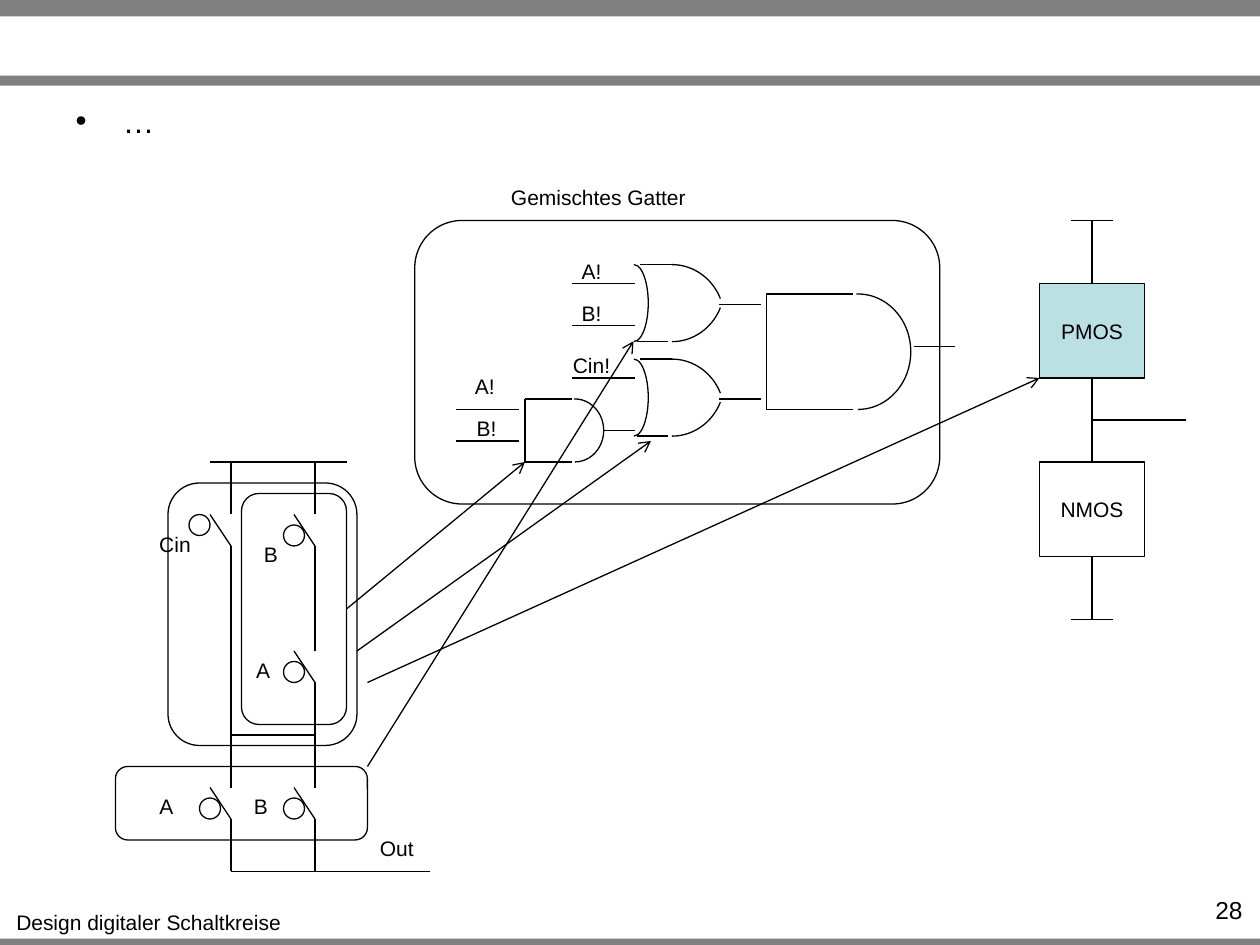
from pptx import Presentation
from pptx.dml.color import RGBColor
from pptx.enum import shapes, text
from pptx.oxml.ns import qn
from pptx.util import Pt
from lxml import etree

FONT, BLACK, GREY, TEAL = "Arial", "000000", "808080", "BBE0E3"
W, H = 720, 540
SHAPE = shapes.MSO_SHAPE

BARS = [(0, 536.4, W, 3.6), (0, 0, W, 9.4), (0, 43.2, W, 5.8)]

# Labels: text, centre x, top, width
LABELS = [
    ("Design digitaler Schaltkreise", 85, 516, 168), ("Gemischtes Gatter", 342, 102, 116),
    ("A!", 338, 144, 27), ("B!", 338, 168, 27), ("Cin!", 338, 198, 38),
    ("A!", 277, 210, 27), ("B!", 278, 234, 27),
    ("Cin", 100, 300, 34), ("A", 150.4, 372, 24), ("B", 154.8, 306, 24),
    ("A", 95, 450, 24), ("B", 149, 450, 24), ("Out", 226.8, 474, 36),
]

# Horizontal wires: x start, x end, y
GATE_WIRES = [
    (411, 435, 174), (411, 435, 228), (327, 363, 162), (327, 363, 186), (327, 363, 216),
    (260.7, 296.7, 234), (260.7, 296.7, 252), (522, 546, 198), (345, 363, 246),
]
SWITCH_WIRES = [(120, 198, 264), (132, 180, 420), (132, 246, 498)]
RAILS = [(612, 636, 126), (612, 636, 354), (624, 678, 240)]

AND_GATES = [(300, 228, 36), (438, 168, 66)]  # left, top, height
OR_GATES = [(354, 151.2), (354, 205.2)]  # left, top

# Each branch: x -> vertical wire spans between the switches
BRANCHES = {
    132: [(264, 294), (312, 342), (342, 420), (420, 450), (468, 498)],
    180: [(264, 294), (312, 342), (342, 372), (390, 420), (420, 450), (468, 498)],
}
# Switches: x, top, offset of the inverting circle
SWITCHES = [(132, 294, (-24, 0)), (180, 294, (-18, 6)), (180, 372, (-18, 6)),
            (132, 450, (-18, 6)), (180, 450, (-18, 6))]

GATE_FRAME = (237, 126, 300, 162)
PARALLEL_FRAME = (66, 438, 144, 42)
SERIES_FRAME = (138, 282, 60, 132)
MIXED_FRAME = (96, 276, 108, 150)
ARROWS = [(210, 390, 594, 216), (210, 438, 362, 195), (204, 372, 372, 252)]

prs = Presentation()
prs.slide_width, prs.slide_height = Pt(W), Pt(H)
s = prs.slides.add_slide(prs.slide_layouts[1])
s.shapes.title.element.getparent().remove(s.shapes.title.element)


def color(value):
    return RGBColor.from_string(value)


def write(sp, words, size=12, align=text.PP_ALIGN.CENTER, wrap=True,
          anchor=text.MSO_ANCHOR.TOP, fit=text.MSO_AUTO_SIZE.NONE, bullet=None):
    tf = sp.text_frame
    tf.word_wrap, tf.auto_size, tf.vertical_anchor = wrap, fit, anchor
    p = tf.paragraphs[0]
    p.alignment, p.space_before = align, Pt(0)
    if bullet:
        pPr = p._p.get_or_add_pPr()
        pPr.set("marL", str(Pt(27)))
        pPr.set("indent", str(-Pt(27)))
        etree.SubElement(pPr, qn("a:buChar"), char=bullet)
    r = p.add_run()
    r.text = words
    r.font.name, r.font.size = FONT, Pt(size)
    r.font.color.rgb = color(BLACK)


def textbox(words, x, y, w, h, **fmt):
    write(s.shapes.add_textbox(Pt(x), Pt(y), Pt(w), Pt(h)), words, **fmt)


def shape(kind, x, y, w, h, fill=None, line=BLACK):
    sp = s.shapes.add_shape(kind, Pt(x), Pt(y), Pt(w), Pt(h))
    sp.shadow.inherit = False
    if fill:
        sp.fill.solid()
        sp.fill.fore_color.rgb = color(fill)
    else:
        sp.fill.background()
    if line:
        sp.line.color.rgb, sp.line.width = color(line), Pt(0.75)
    else:
        sp.line.fill.background()
    return sp


def line(x1, y1, x2, y2, arrow=False, begin=None, end=None):
    """Draw a wire; begin and end are (shape, side) pairs to join."""
    c = s.shapes.add_connector(shapes.MSO_CONNECTOR.STRAIGHT, Pt(x1), Pt(y1), Pt(x2), Pt(y2))
    c.line.color.rgb, c.line.width = color(BLACK), Pt(0.75)
    if arrow:
        etree.SubElement(c.line._get_or_add_ln(), qn("a:tailEnd"), type="arrow")
    etree.SubElement(c._element.spPr, qn("a:effectLst"))
    if begin:
        c.begin_connect(*begin)
    if end:
        c.end_connect(*end)


def arc(x, y, w, h, start, stop):
    """Draw an arc clockwise between two angles in degrees."""
    sp = shape(SHAPE.ARC, x, y, w, h)
    sp.adjustments[0], sp.adjustments[1] = start * 0.6, stop * 0.6


def and_gate(x, y, h):
    for edge in (y, y + h):
        line(x, edge, x + h * 0.75, edge)
    arc(x + h / 3, y, h * 11 / 12, h, 268.5, 90)
    line(x, y, x, y + h)


def or_gate(x, y):
    arc(x, y, 16.5, 44, 270, 89.8)
    arc(x, y, 60, 63.4, 270, 336.1)
    line(x + 30, y, x + 12, y)
    line(x + 28, y + 44, x + 10, y + 44)
    arc(x, y - 19.4, 60, 63.4, 23.9, 90)


def switch(x, y, circle):
    line(x, y + 18, x - 12, y)
    shape(SHAPE.OVAL, x + circle[0], y + circle[1], 12, 12)


def network(name, y, fill=None):
    sp = shape(SHAPE.RECTANGLE, 594, y, 60, 54, fill)
    write(sp, name, anchor=text.MSO_ANCHOR.MIDDLE)
    return sp


for bar in BARS:
    shape(SHAPE.RECTANGLE, *bar, fill=GREY, line=None)

body = s.placeholders[1]
body.left, body.top, body.width, body.height = Pt(36), Pt(54.7), Pt(648), Pt(53.3)
write(body, "…", size=18, align=text.PP_ALIGN.LEFT, bullet="•")
textbox("28", 654.6, 507.8, 62.6, 17.3, size=14, align=text.PP_ALIGN.RIGHT)

for words, cx, y, w in LABELS:
    textbox(words, cx - w / 2, y, w, 21.6, wrap=False,
            fit=text.MSO_AUTO_SIZE.SHAPE_TO_FIT_TEXT)

for x1, x2, y in GATE_WIRES + SWITCH_WIRES + RAILS:
    line(x1, y, x2, y)
for gate in AND_GATES:
    and_gate(*gate)
for gate in OR_GATES:
    or_gate(*gate)

pmos, nmos = network("PMOS", 162, TEAL), network("NMOS", 264)
line(624, 126, 624, 162, end=(pmos, 0))
line(624, 216, 624, 264, begin=(pmos, 2), end=(nmos, 0))
line(624, 318, 624, 354, begin=(nmos, 2))

for x, spans in BRANCHES.items():
    for top, bottom in spans:
        line(x, top, x, bottom)
for item in SWITCHES:
    switch(*item)

for frame in (GATE_FRAME, PARALLEL_FRAME, MIXED_FRAME):
    shape(SHAPE.ROUNDED_RECTANGLE, *frame)
series = shape(SHAPE.ROUNDED_RECTANGLE, *SERIES_FRAME)
line(198, 348, 300, 264, arrow=True, begin=(series, 3))
for ends in ARROWS:
    line(*ends, arrow=True)

prs.save("out.pptx")
